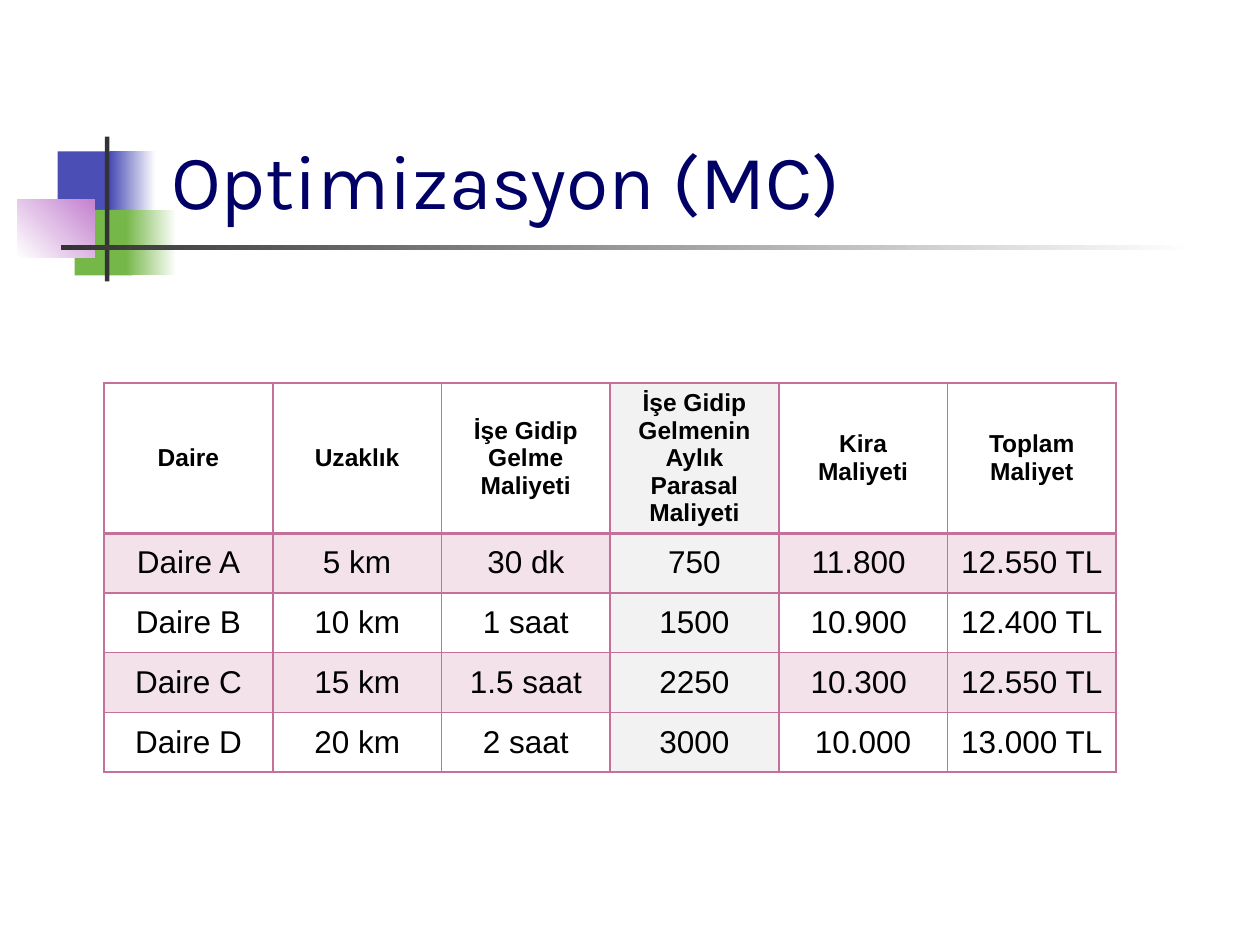
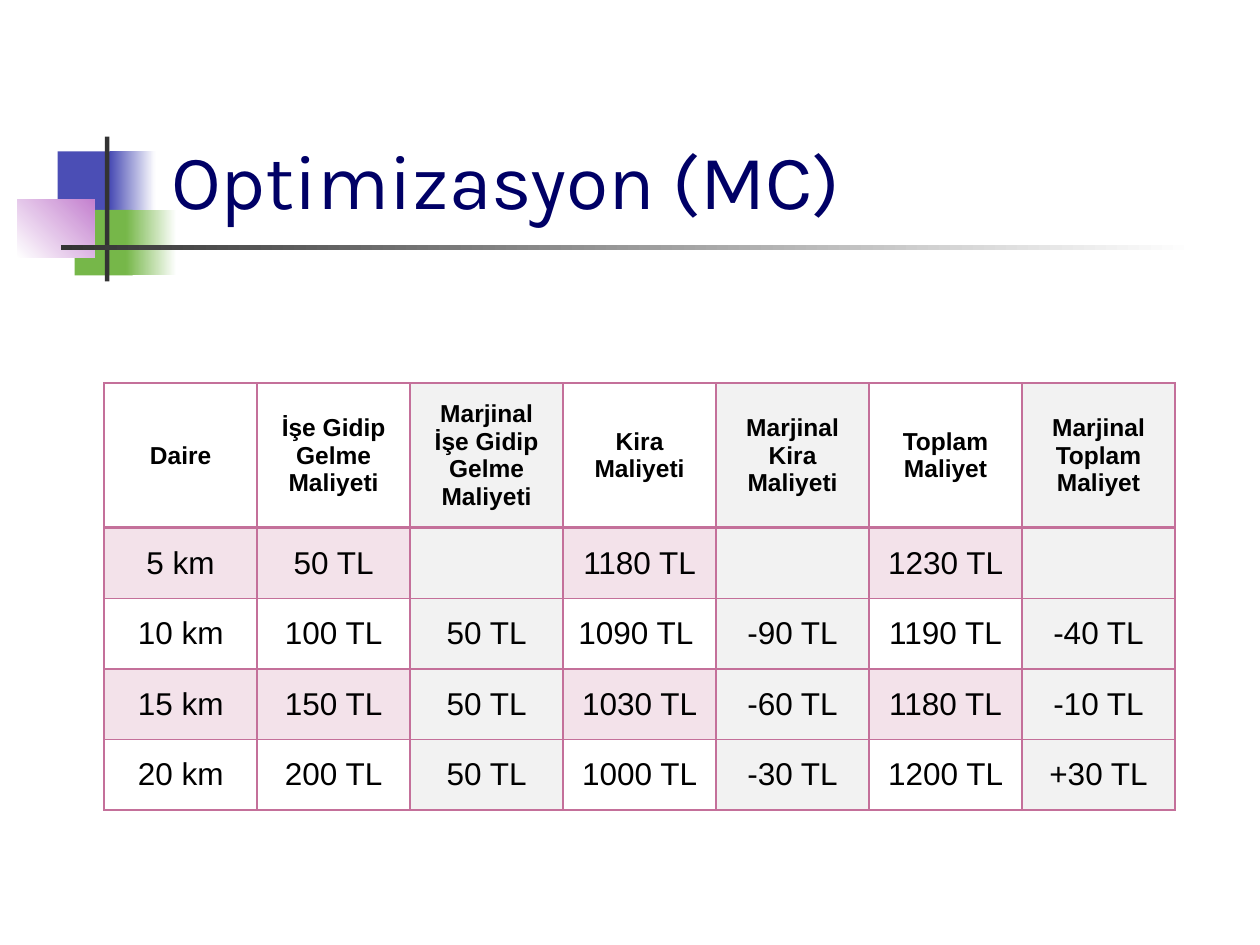
"""Build two slides of cost tables for choosing a flat by distance from work."""
from lxml import etree
from pptx import Presentation
from pptx import util as u
from pptx.dml.color import RGBColor
from pptx.enum import shapes, text
from pptx.oxml import ns

Pt = u.Pt

THEME = {
    "blue": "4B4EB5", "green": "76B749", "violet": "C481CF", "dark": "333333",
    "white": "FFFFFF", "navy": "000066", "black": "000000",
    "rose": "C4709A", "grey": "F2F2F2", "band_alpha": 20,
    "title_font": "Karla", "body_font": "Arial",
    "title_size": 44, "head_size": 14, "body_size": 18,
    "rule": 1, "head_rule": 2, "cell_margin": 0.5,
}
SLIDE_SIZE = (720, 540)
TITLE_BOX = (90.72, 17, 613.44, 115.2)
TABLE_CORNER = (59.5, 218.88)

ORNAMENTS = [
    ((33, 86.5, 34.5, 37.44), ["blue"], 0),
    ((63, 86.5, 25.92, 37.44), ["blue", "white"], 0),
    ((42.7, 119.9, 33.12, 37.44), ["green"], 0),
    ((72, 119.9, 28.8, 37.44), ["green", "white"], 0),
    ((10, 113.9, 44, 33.5), ["white", "violet"], 45),
    ((60, 78, 2.5, 82.8), ["dark"], 0),
    ((34.9, 140.2, 648, 2.5), ["dark", "white"], 0),
]

SLIDES = [
    {
        "title": "Optimizasyon (MC)",
        "width": 578.4, "head_height": 85.8, "row_height": 34.15,
        "grey_columns": {3},
        "rows": [
            ["Daire", "Uzaklık", "İşe Gidip Gelme Maliyeti",
             "İşe Gidip Gelmenin Aylık Parasal Maliyeti", "Kira Maliyeti", "Toplam Maliyet"],
            ["Daire A", "5 km", "30 dk", "750", "11.800 ", "12.550 TL"],
            ["Daire B", "10 km", "1 saat", "1500", "10.900 ", "12.400 TL"],
            ["Daire C", "15 km", "1.5 saat", "2250", "10.300 ", "12.550 TL"],
            ["Daire D", "20 km", "2 saat", "3000", "10.000", "13.000 TL"],
        ],
    },
    {
        "title": "Optimizasyon (MC)",
        "width": 612, "head_height": 82.8, "row_height": 40.3,
        "grey_columns": {2, 4, 6},
        "rows": [
            ["Daire", "İşe Gidip Gelme Maliyeti", "Marjinal İşe Gidip Gelme Maliyeti",
             "Kira Maliyeti", "Marjinal Kira Maliyeti", "Toplam Maliyet",
             "Marjinal Toplam Maliyet"],
            ["5 km", "50 TL", "", "1180 TL", "", "1230 TL", ""],
            ["10 km", "100 TL", "50 TL", "1090 TL ", "-90 TL", "1190 TL", "-40 TL"],
            ["15 km", "150 TL", "50 TL", "1030 TL", "-60 TL", "1180 TL", "-10 TL"],
            ["20 km", "200 TL", "50 TL", "1000 TL", "-30 TL", "1200 TL", "+30 TL"],
        ],
    },
]


def color(key):
    return RGBColor.from_string(THEME[key])


def points(values):
    return [Pt(value) for value in values]


def apply(target, formats):
    for attribute, value in formats.items():
        setattr(target, attribute, value)


def write(paragraph, words, font, size, ink, bold=False):
    run = paragraph.add_run()
    run.text = words
    apply(run.font, {"name": THEME[font], "size": Pt(THEME[size]), "bold": bold})
    run.font.color.rgb = color(ink)


def add_ornaments(slide):
    for box, tones, angle in ORNAMENTS:
        ornament = slide.shapes.add_shape(shapes.MSO_SHAPE.RECTANGLE, *points(box))
        ornament.shadow.inherit = False
        ornament.line.fill.background()
        if len(tones) == 1:
            ornament.fill.solid()
            ornament.fill.fore_color.rgb = color(tones[0])
            continue
        ornament.fill.gradient()
        ornament.fill.gradient_angle = angle
        for stop, tone in zip(ornament.fill.gradient_stops, tones):
            stop.color.rgb = color(tone)


def add_title(slide, words):
    frame = slide.shapes.add_textbox(*points(TITLE_BOX)).text_frame
    apply(frame, {"word_wrap": True, "vertical_anchor": text.MSO_ANCHOR.BOTTOM})
    write(frame.paragraphs[0], words, "title_font", "title_size", "navy")


def add_borders(cell, widths):
    properties = cell._tc.get_or_add_tcPr()
    for side, width in widths.items():
        line = etree.SubElement(properties, ns.qn(f"a:ln{side}"), w=str(Pt(width)))
        fill = etree.SubElement(line, ns.qn("a:solidFill"))
        etree.SubElement(fill, ns.qn("a:srgbClr"), val=THEME["rose"])


def fill_cell(cell, tone, alpha=None):
    if tone is None:
        cell.fill.background()
        return
    cell.fill.solid()
    cell.fill.fore_color.rgb = color(tone)
    if alpha:
        tint = cell._tc.tcPr.find(ns.qn("a:solidFill")).find(ns.qn("a:srgbClr"))
        etree.SubElement(tint, ns.qn("a:alpha"), val=str(alpha * 1000))


def add_cost_table(slide, content):
    rows = content["rows"]
    heights = [content["head_height"]] + [content["row_height"]] * (len(rows) - 1)
    size = (content["width"], sum(heights))
    costs = slide.shapes.add_table(
        len(rows), len(rows[0]), *points(TABLE_CORNER + size)).table
    apply(costs, {"first_row": False, "horz_banding": False})
    for column in costs.columns:
        column.width = Pt(content["width"] / len(rows[0]))
    margin = Pt(THEME["cell_margin"])
    cell_format = {"vertical_anchor": text.MSO_ANCHOR.MIDDLE,
                   "margin_top": margin, "margin_bottom": margin}
    rule, head_rule = THEME["rule"], THEME["head_rule"]
    for r, (row, height) in enumerate(zip(rows, heights)):
        costs.rows[r].height = Pt(height)
        is_head = r == 0
        borders = {"L": rule, "R": rule,
                   "T": head_rule if r == 1 else rule,
                   "B": head_rule if is_head else rule}
        for c, words in enumerate(row):
            cell = costs.cell(r, c)
            apply(cell, cell_format)
            add_borders(cell, borders)
            if c in content["grey_columns"]:
                fill_cell(cell, "grey")
            elif r % 2:
                fill_cell(cell, "rose", THEME["band_alpha"])
            else:
                fill_cell(cell, None)
            paragraph = cell.text_frame.paragraphs[0]
            paragraph.alignment = text.PP_ALIGN.CENTER
            if words:
                write(paragraph, words, "body_font",
                      "head_size" if is_head else "body_size", "black", is_head)


def main():
    deck = Presentation()
    deck.slide_width, deck.slide_height = points(SLIDE_SIZE)
    for content in SLIDES:
        slide = deck.slides.add_slide(deck.slide_layouts[6])
        add_ornaments(slide)
        add_title(slide, content["title"])
        add_cost_table(slide, content)
    deck.save("out.pptx")


if __name__ == "__main__":
    main()
